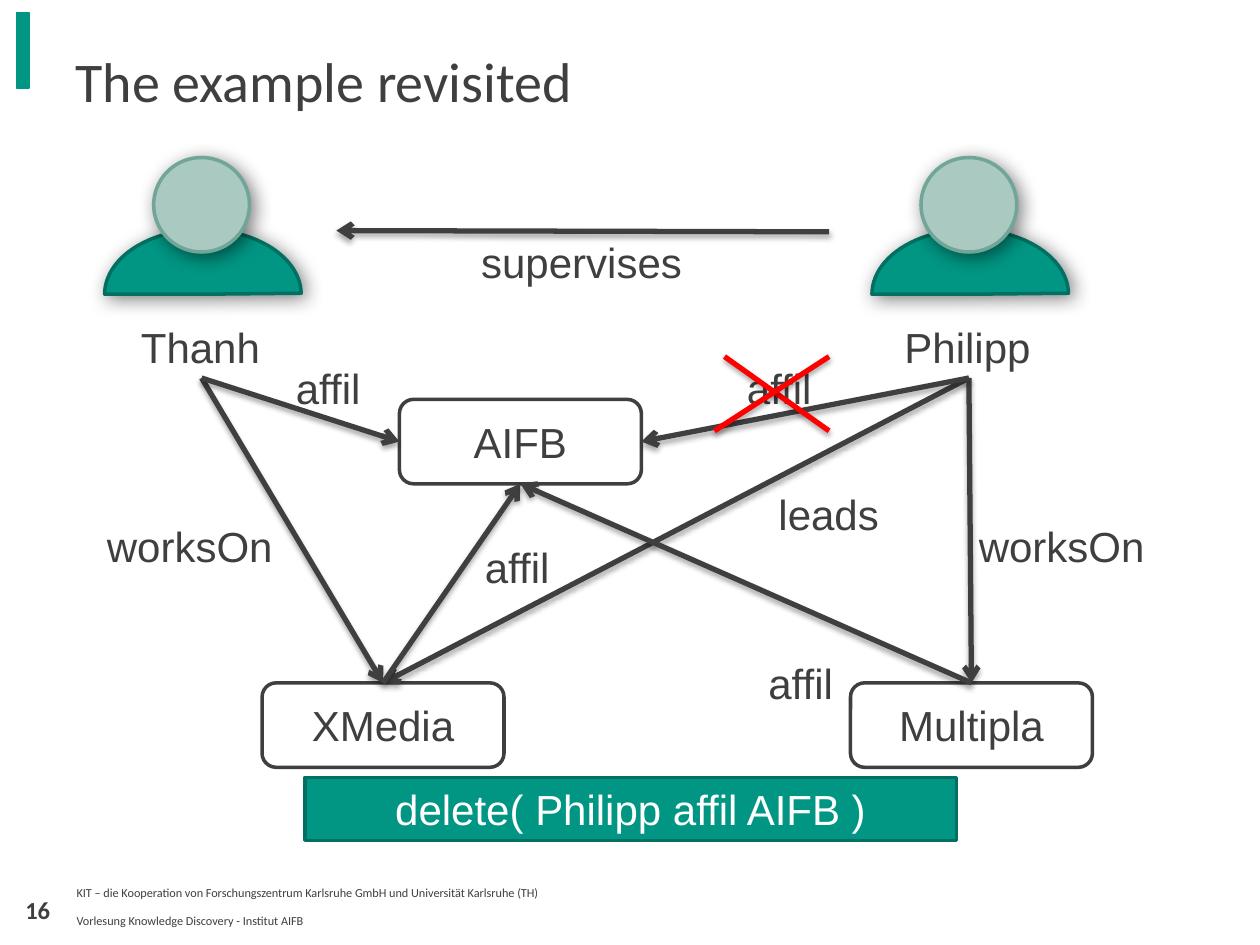
from lxml import etree
from pptx import Presentation
from pptx.dml.color import RGBColor
from pptx.enum.shapes import MSO_CONNECTOR, MSO_SHAPE
from pptx.enum.text import MSO_ANCHOR, MSO_AUTO_SIZE, PP_ALIGN
from pptx.oxml.ns import qn
from pptx.util import Inches, Pt

COLORS = {
    "ink": "3F3F3F", "white": "FFFFFF", "black": "000000", "red": "FF0000",
    "green": "019683", "green_edge": "016F61", "head": "AAC9C1", "head_edge": "71A598",
}
TOP, LEFT, BOTTOM, RIGHT = range(4)


def color(name):
    return RGBColor.from_string(COLORS[name])


def add_shadow(shape, opacity, blur, distance, angle):
    effects = etree.SubElement(shape._element.spPr, qn("a:effectLst"))
    shadow = etree.SubElement(
        effects, qn("a:outerShdw"), blurRad=str(Pt(blur)), dist=str(Pt(distance)),
        dir=str(angle * 60000), rotWithShape="0")
    tint = etree.SubElement(shadow, qn("a:srgbClr"), val=COLORS["black"])
    etree.SubElement(tint, qn("a:alpha"), val=str(opacity * 1000))


def write(shape, text, size=24, name="Arial", ink="ink", bold=False,
          align=PP_ALIGN.LEFT, anchor=MSO_ANCHOR.TOP, wrap=True):
    frame = shape.text_frame
    frame.word_wrap = wrap
    frame.vertical_anchor = anchor
    frame.text = text
    paragraph = frame.paragraphs[0]
    paragraph.alignment = align
    font = paragraph.font
    font.size, font.name, font.bold = Pt(size), name, bold
    font.color.rgb = color(ink)


def add_text(shapes, box, text, **style):
    shape = shapes.add_textbox(*map(Inches, box))
    write(shape, text, **style)
    return shape


def add_label(shapes, box, text):
    shape = add_text(shapes, box, text, wrap=False)
    shape.text_frame.auto_size = MSO_AUTO_SIZE.SHAPE_TO_FIT_TEXT
    return shape


def add_filled(shapes, kind, box, fill, edge, width=2):
    shape = shapes.add_shape(kind, *map(Inches, box))
    shape.fill.solid()
    shape.fill.fore_color.rgb = color(fill)
    shape.line.color.rgb = color(edge)
    shape.line.width = Pt(width)
    return shape


def add_line(shapes, start=(0, 0), end=(0, 0), ink="ink", arrow=False):
    line = shapes.add_connector(MSO_CONNECTOR.STRAIGHT, *map(Inches, (*start, *end)))
    line.line.color.rgb = color(ink)
    line.line.width = Pt(3)
    if arrow:
        etree.SubElement(line.line._get_or_add_ln(), qn("a:tailEnd"), type="arrow")
    add_shadow(line, 35, 3.1, 1.8, 90)
    return line


def add_person(slide, left, top, name, label_width):
    """Draw a head-and-shoulders figure and return its name label."""
    group = slide.shapes.add_group_shape().shapes
    body = add_filled(group, MSO_SHAPE.PIE, (left, top + 0.57, 1.56, 1.03), "green", "green_edge")
    body.rotation = 180
    body.adjustments[0], body.adjustments[1] = 0, 107.65
    head = add_filled(group, MSO_SHAPE.OVAL, (left + 0.39, top, 0.76, 0.75), "head", "head_edge")
    for part in (body, head):
        add_shadow(part, 50, 11, 3, 45)
    label_left = left + 0.77 - label_width / 2
    return add_label(group, (label_left, top + 1.25, label_width, 0.5), name)


def add_node(slide, left, top, name):
    node = add_filled(slide.shapes, MSO_SHAPE.ROUNDED_RECTANGLE,
                      (left, top, 1.92, 0.67), "white", "ink")
    node.shadow.inherit = False
    write(node, name, align=PP_ALIGN.CENTER, anchor=MSO_ANCHOR.MIDDLE)
    return node


def add_cross(slide, left, top, width, height):
    group = slide.shapes.add_group_shape().shapes
    right, bottom = left + width, top + height
    add_line(group, (left + 0.08, top), (right, bottom), "red")
    add_line(group, (left, bottom), (right, top), "red")


def add_frame(slide):
    """Accent bar, title and footer."""
    shapes = slide.shapes
    bar = add_filled(shapes, MSO_SHAPE.RECTANGLE, (0.13, 0.1, 0.1, 0.6), "green", "green", 0.75)
    bar.shadow.inherit = False
    middle = {"name": "Calibri", "anchor": MSO_ANCHOR.MIDDLE}
    add_text(shapes, (0.5, 0.26, 7.94, 0.76), "The example revisited", size=32, **middle)
    add_text(shapes, (0.51, 6.98, 4.33, 0.22),
             "KIT – die Kooperation von Forschungszentrum Karlsruhe GmbH und "
             "Universität Karlsruhe (TH)", size=7, name="Calibri")
    add_text(shapes, (0.51, 7.19, 3.87, 0.24),
             "Vorlesung Knowledge Discovery - Institut AIFB", size=7, **middle)
    add_text(shapes, (0.1, 7.1, 0.4, 0.24), "16", size=14, bold=True,
             align=PP_ALIGN.CENTER, **middle)


def add_graph(slide):
    """People, nodes and the relations between them."""
    shapes = slide.shapes
    philipp = add_person(slide, 6.92, 1.25, "Philipp", 1.22)
    thanh = add_person(slide, 0.83, 1.25, "Thanh", 1.16)
    xmedia = add_node(slide, 2.08, 5.42, "XMedia")
    multipla = add_node(slide, 6.75, 5.42, "Multipla")
    aifb = add_node(slide, 3.17, 3.17, "AIFB")

    # Relations: source, side, target, side
    add_line(shapes, (6.58, 1.84), (2.67, 1.83), arrow=True)
    for source, source_side, target, target_side in (
        (philipp, BOTTOM, xmedia, TOP),
        (thanh, BOTTOM, xmedia, TOP),
        (philipp, BOTTOM, multipla, TOP),
        (xmedia, TOP, aifb, BOTTOM),
        (philipp, BOTTOM, aifb, RIGHT),
        (multipla, TOP, aifb, BOTTOM),
        (thanh, BOTTOM, aifb, LEFT),
    ):
        line = add_line(shapes, arrow=True)
        line.begin_connect(source, source_side)
        line.end_connect(target, target_side)

    # Relation names: left, top, width
    for text, left, top, width in (
        ("supervises", 3.72, 1.83, 1.81),
        ("leads", 6.08, 3.83, 1.01),
        ("worksOn", 0.75, 4.08, 1.53),
        ("worksOn", 7.67, 4.08, 1.53),
        ("affil", 3.75, 4.25, 0.72),
        ("affil", 5.83, 2.83, 0.72),
        ("affil", 6, 5.17, 0.72),
        ("affil", 2.25, 2.83, 0.72),
    ):
        add_label(shapes, (left, top, width, 0.5), text)
    add_cross(slide, 5.67, 2.83, 0.91, 0.59)


def add_command(slide, box, text):
    banner = add_filled(slide.shapes, MSO_SHAPE.RECTANGLE, box, "green", "green_edge")
    banner.shadow.inherit = False
    write(banner, text, ink="white", align=PP_ALIGN.CENTER)
    banner.text_frame.auto_size = MSO_AUTO_SIZE.SHAPE_TO_FIT_TEXT


def main():
    presentation = Presentation()
    presentation.slide_width, presentation.slide_height = Inches(10), Inches(7.5)
    slide = presentation.slides.add_slide(presentation.slide_layouts[6])
    add_frame(slide)
    add_graph(slide)
    add_command(slide, (2.42, 6.17, 5.17, 0.5), "delete( Philipp affil AIFB )")
    presentation.save("out.pptx")


if __name__ == "__main__":
    main()
